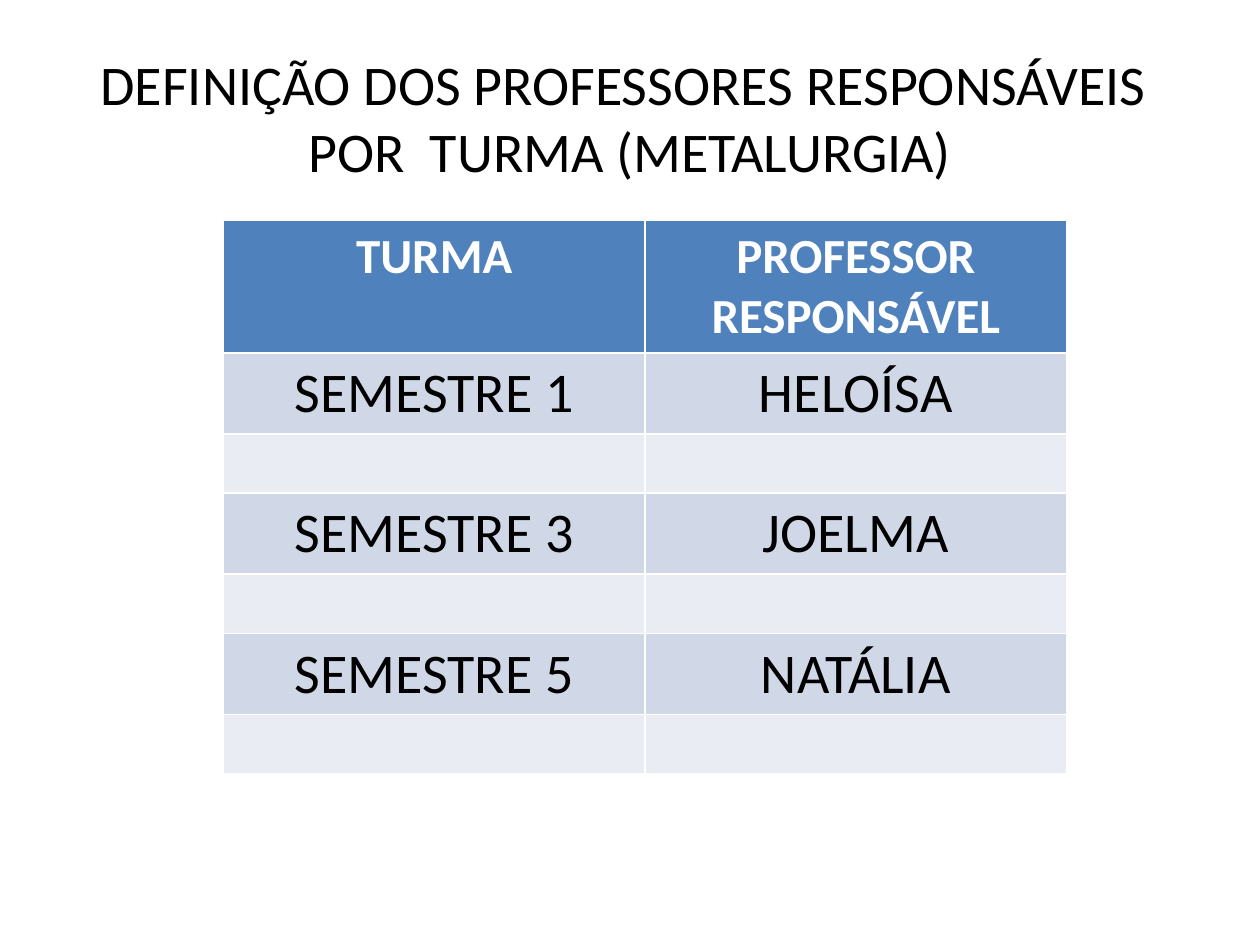
import pptx
import pptx.dml.color
import pptx.enum.text
import pptx.util

Pt = pptx.util.Pt
TITLE_ONLY = 5


def color(hex_string):
    return pptx.dml.color.RGBColor.from_string(hex_string)


class SlideBuilder:
    font_name = "Calibri"
    text_color = "000000"
    header_text_color = "FFFFFF"
    header_fill = "4F81BD"
    band_fills = ("D0D8E7", "E9ECF3")
    title_size = 32
    header_size = 28
    body_size = 32

    def __init__(self, presentation):
        self.slide = presentation.slides.add_slide(
            presentation.slide_layouts[TITLE_ONLY])

    def format_text(self, text_frame, size, text_color, bold=False):
        for paragraph in text_frame.paragraphs:
            paragraph.alignment = pptx.enum.text.PP_ALIGN.CENTER
            for run in paragraph.runs:
                run.font.name = self.font_name
                run.font.size = Pt(size)
                run.font.bold = bold
                run.font.color.rgb = color(text_color)

    def title(self, text, left, top, width, height):
        shape = self.slide.shapes.title
        shape.left, shape.top = Pt(left), Pt(top)
        shape.width, shape.height = Pt(width), Pt(height)
        text_frame = shape.text_frame
        text_frame.text = text
        text_frame.word_wrap = True
        text_frame.vertical_anchor = pptx.enum.text.MSO_ANCHOR.MIDDLE
        self.format_text(text_frame, self.title_size, self.text_color)

    def table(self, rows, left, top, width, row_heights):
        # The default table style supplies the white grid lines
        table = self.slide.shapes.add_table(
            len(rows), len(rows[0]), Pt(left), Pt(top),
            Pt(width), Pt(sum(row_heights))).table
        for row_index, (texts, height) in enumerate(zip(rows, row_heights)):
            table.rows[row_index].height = Pt(height)
            is_header = row_index == 0
            fill = (self.header_fill if is_header
                    else self.band_fills[(row_index - 1) % 2])
            for column_index, text in enumerate(texts):
                cell = table.cell(row_index, column_index)
                cell.fill.solid()
                cell.fill.fore_color.rgb = color(fill)
                if not text:
                    continue
                cell.text_frame.text = text
                if is_header:
                    self.format_text(cell.text_frame, self.header_size,
                                     self.header_text_color, bold=True)
                else:
                    self.format_text(cell.text_frame, self.body_size,
                                     self.text_color)


def main():
    presentation = pptx.Presentation()
    presentation.slide_width = Pt(720)
    presentation.slide_height = Pt(540)
    builder = SlideBuilder(presentation)

    # Title
    builder.title(
        "DEFINIÇÃO DOS PROFESSORES RESPONSÁVEIS  POR  TURMA (METALURGIA)",
        36, 21.6, 648, 90)

    # Classes and their teachers, each followed by an empty row
    teachers = [("SEMESTRE 1", "HELOÍSA"),
                ("SEMESTRE 3", "JOELMA"),
                ("SEMESTRE 5", "NATÁLIA")]
    rows = [("TURMA", "PROFESSOR RESPONSÁVEL")]
    row_heights = [75.6]
    for teacher in teachers:
        rows += [teacher, ("", "")]
        row_heights += [46.1, 33.8]
    builder.table(rows, 127.6, 126, 482, row_heights)

    presentation.save("out.pptx")


if __name__ == "__main__":
    main()
